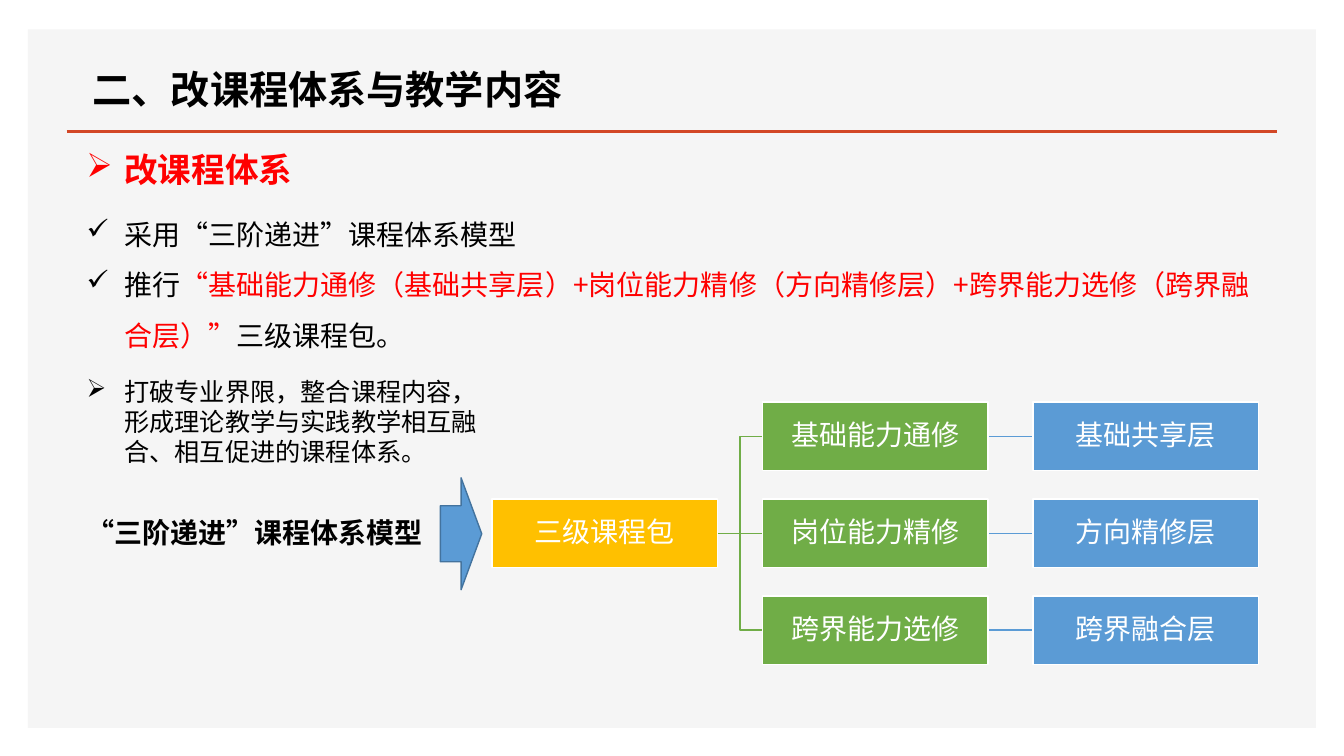
from dataclasses import dataclass

from lxml.etree import SubElement
from pptx import Presentation
from pptx.dml.color import RGBColor
from pptx.enum.shapes import MSO_CONNECTOR, MSO_SHAPE
from pptx.enum.text import MSO_ANCHOR, MSO_AUTO_SIZE, PP_ALIGN
from pptx.oxml.ns import qn
from pptx.util import Pt


@dataclass(frozen=True)
class Theme:
    panel: str = "F5F5F5"
    rule: str = "D24726"
    ink: str = "000000"
    accent: str = "FF0000"
    white: str = "FFFFFF"
    gold: str = "FFC000"
    green: str = "70AD47"
    blue: str = "5B9BD5"
    blue_edge: str = "43739E"
    title_size: int = 28
    heading_size: int = 24
    body_size: int = 20
    note_size: int = 18
    font: str = "Noto Sans CJK SC"
    accent_font: str = "Noto Sans CJK JP"
    note_font: str = "Lato"


class SlideBuilder:
    def __init__(self, page, theme):
        self.page = page
        self.theme = theme

    def style_span(self, span, size, color=None, bold=False, font=None):
        span.font.size = Pt(size)
        span.font.bold = bold
        span.font.color.rgb = RGBColor.from_string(color or self.theme.ink)
        span.font.name = font or self.theme.font
        east_asian = SubElement(span.font._element, qn("a:ea"))
        east_asian.set("typeface", font or self.theme.font)

    def title(self, text, left, top, width, height):
        box = self.page.shapes.title
        self.page.shapes.element.append(box.element)
        box.left, box.top, box.width, box.height = map(Pt, (left, top, width, height))
        frame = box.text_frame
        frame.text = text
        frame.word_wrap = False
        frame.auto_size = MSO_AUTO_SIZE.NONE
        frame.vertical_anchor = MSO_ANCHOR.TOP
        frame.paragraphs[0].alignment = PP_ALIGN.LEFT
        self.style_span(frame.paragraphs[0].runs[0], self.theme.title_size, bold=True)

    def bullet(self, para, symbol):
        properties = para._p.get_or_add_pPr()
        properties.set("marL", str(Pt(27)))
        properties.set("indent", str(-Pt(27)))
        SubElement(properties, qn("a:buChar")).set("char", symbol)

    def text(self, paragraphs, left, top, width, height, size, bold=False,
             symbol=None, spacing=None, wrap=True):
        box = self.page.shapes.add_textbox(*map(Pt, (left, top, width, height)))
        frame = box.text_frame
        frame.word_wrap = wrap
        for index, spans in enumerate(paragraphs):
            para = frame.add_paragraph() if index else frame.paragraphs[0]
            if spacing:
                para.line_spacing = spacing
            if symbol:
                self.bullet(para, symbol)
            for words, color, font in spans:
                span = para.add_run()
                span.text = words
                self.style_span(span, size, color, bold, font)

    def shape(self, kind, left, top, width, height, fill, edge=None):
        shape = self.page.shapes.add_shape(kind, *map(Pt, (left, top, width, height)))
        shape.shadow.inherit = False
        shape.fill.solid()
        shape.fill.fore_color.rgb = RGBColor.from_string(fill)
        if edge:
            shape.line.color.rgb = RGBColor.from_string(edge)
            shape.line.width = Pt(1)
        else:
            shape.line.fill.background()
        return shape

    def node(self, text, left, top, width, height, fill):
        box = self.shape(MSO_SHAPE.RECTANGLE, left, top, width, height, fill, self.theme.white)
        frame = box.text_frame
        frame.text = text
        frame.margin_left = frame.margin_right = Pt(1)
        frame.margin_top = frame.margin_bottom = Pt(1)
        frame.vertical_anchor = MSO_ANCHOR.MIDDLE
        para = frame.paragraphs[0]
        para.alignment = PP_ALIGN.CENTER
        para.line_spacing = 0.9
        self.style_span(para.runs[0], self.theme.body_size, self.theme.white)

    def line(self, start, end, color, width=1):
        kind = MSO_CONNECTOR.STRAIGHT if start[1] == end[1] else MSO_CONNECTOR.ELBOW
        line = self.page.shapes.add_connector(kind, *map(Pt, (*start, *end)))
        line.line.color.rgb = RGBColor.from_string(color)
        line.line.width = Pt(width)
        SubElement(line._element.spPr, qn("a:effectLst"))


def draw_course_tree(builder):
    theme = builder.theme
    width, height = 161.3, 49
    root, branch, leaf = (351.4 + 193.2 * column for column in range(3))
    layers = [
        ("基础能力通修", "基础共享层"),
        ("岗位能力精修", "方向精修层"),
        ("跨界能力选修", "跨界融合层"),
    ]
    tops = [287.2 + 69.2 * row for row in range(len(layers))]
    root_middle = tops[1] + height / 2
    for top in tops:
        middle = top + height / 2
        builder.line((root + width, root_middle), (branch, middle), theme.green)
        builder.line((branch + width, middle), (leaf, middle), theme.blue)
    builder.node("三级课程包", root, tops[1], width, height, theme.gold)
    for top, (ability, layer) in zip(tops, layers):
        builder.node(ability, branch, top, width, height, theme.green)
        builder.node(layer, leaf, top, width, height, theme.blue)


def main():
    deck = Presentation()
    deck.slide_width, deck.slide_height = Pt(960), Pt(540)
    theme = Theme()
    builder = SlideBuilder(deck.slides.add_slide(deck.slide_layouts[5]), theme)

    builder.shape(MSO_SHAPE.RECTANGLE, 20, 21, 920, 499, theme.panel)
    builder.line((47.7, 94), (912, 94), theme.rule, 2)
    builder.title("二、改课程体系与教学内容", 59, 43.2, 353.5, 41)
    builder.text([[("改课程体系", theme.accent, None)]], 54.7, 103, 162.7, 36,
                 theme.heading_size, bold=True, symbol="➢", wrap=False)
    builder.text(
        [
            [("采用“三阶递进”课程体系模型", None, None)],
            [
                ("推行", None, None),
                ("“基础能力通修（基础共享层）+岗位能力精修（方向精修层）+跨界能力选修（跨界融合层）”",
                 theme.accent, theme.accent_font),
                ("三级课程包。", None, None),
            ],
        ],
        54.7, 139.7, 860.4, 116.6, theme.body_size, symbol="✓", spacing=1.5)
    builder.text(
        [[("打破专业界限，整合课程内容，形成理论教学与实践教学相互融合、相互促进的课程体系。",
           None, theme.note_font)]],
        54.7, 265, 296.6, 72.7, theme.note_size, symbol="➢")
    builder.text([[("“三阶递进”课程体系模型", None, None)]], 54.7, 365, 257, 31.7,
                 theme.body_size, bold=True, wrap=False)
    builder.shape(MSO_SHAPE.RIGHT_ARROW, 314.6, 341.3, 29.5, 80, theme.blue, theme.blue_edge)
    draw_course_tree(builder)

    deck.save("out.pptx")


if __name__ == "__main__":
    main()
